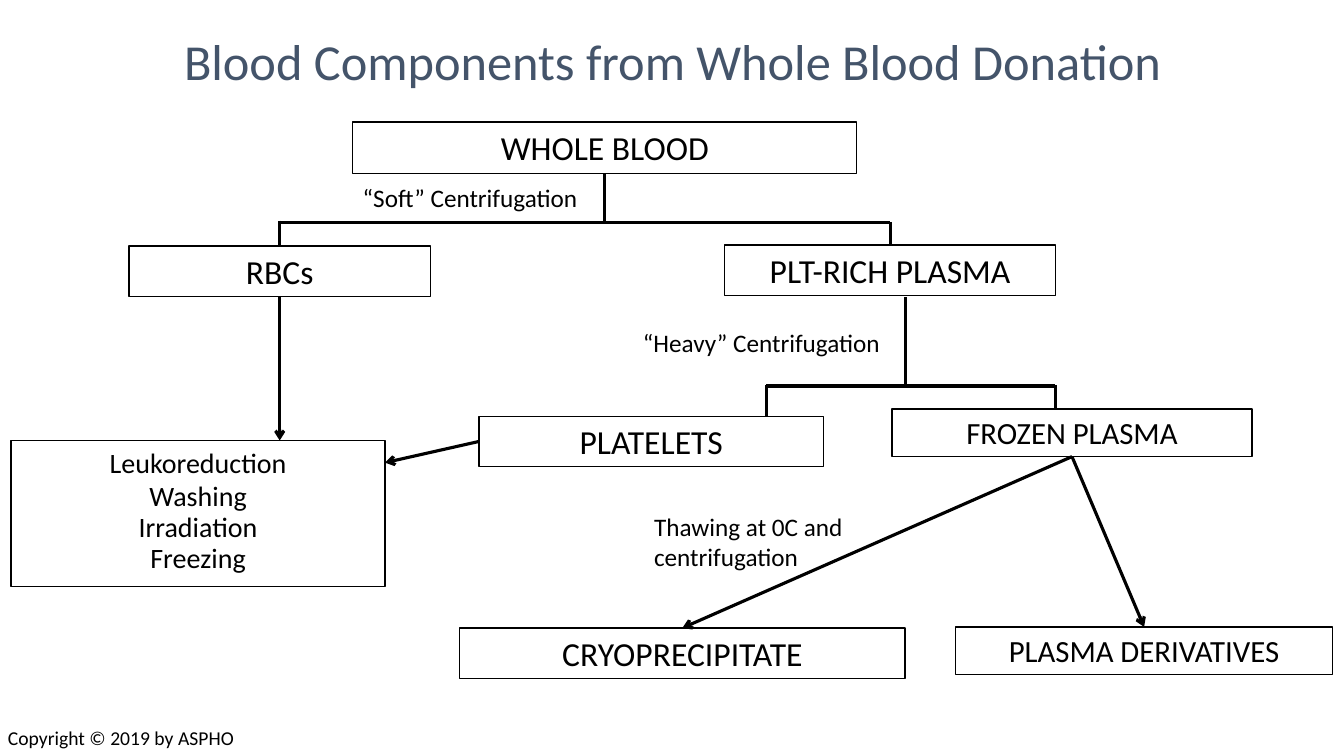
"""Build a flow chart of the blood components made from a whole blood donation."""
from dataclasses import dataclass
from typing import NamedTuple, Union

import pptx
import pptx.dml.color
import pptx.enum.shapes
import pptx.enum.text
import pptx.oxml
import pptx.oxml.ns
import pptx.util

COLORS = {"ink": "000000", "title": "44546A", "paper": "FFFFFF"}
FONT = "Calibri"
SLIDE_COLUMNS, SLIDE_ROWS = 133.33, 75
GRID_STEP = 0.1
TOP, LEFT, BOTTOM = 0, 1, 2
CENTER = pptx.enum.text.PP_ALIGN.CENTER
STRAIGHT = pptx.enum.shapes.MSO_CONNECTOR.STRAIGHT


class Point(NamedTuple):
    column: float
    row: float


class Side(NamedTuple):
    box: str
    site: int


class Area(NamedTuple):
    column: float
    row: float
    columns: float
    rows: float


@dataclass(frozen=True)
class Box:
    lines: tuple[str, ...]
    area: Area
    size: int = 24


@dataclass(frozen=True)
class Label:
    text: str
    area: Area
    size: int = 18
    color: str = "ink"
    centered: bool = False


@dataclass(frozen=True)
class Link:
    start: Union[Point, Side]
    end: Union[Point, Side]
    arrow: bool = False


BOXES = {
    "whole": Box(("WHOLE BLOOD",), Area(35, 12.1, 50, 5.1)),
    "red cells": Box(("RBCs",), Area(12.8, 24.4, 29.9, 5)),
    "rich plasma": Box(("PLT-RICH PLASMA",), Area(71.9, 24.3, 32.8, 5)),
    "platelets": Box(("PLATELETS",), Area(47.5, 41.3, 34.2, 5)),
    "frozen": Box(("FROZEN PLASMA",), Area(88.5, 40.6, 35.7, 4.7), 22),
    "cryo": Box(("CRYOPRECIPITATE",), Area(45.6, 62.3, 44.2, 5)),
    "derivatives": Box(("PLASMA DERIVATIVES",), Area(94.8, 62.2, 37.4, 4.7), 22),
    "processing": Box(("Leukoreduction", "Washing", "Irradiation", "Freezing"),
                      Area(1.1, 43.7, 37.1, 14.5), 20),
}
LABELS = (
    Label("Blood Components from Whole Blood Donation",
          Area(10.6, 2.5, 112.3, 7.1), 36, "title", True),
    Label("“Soft” Centrifugation", Area(35, 17.6, 25, 4)),
    Label("“Heavy” Centrifugation", Area(62.8, 32, 26.3, 4)),
    Label("Thawing at 0C and centrifugation", Area(63.9, 50.2, 23.1, 7.1)),
    Label("Copyright © 2019 by ASPHO", Area(-0.2, 71.5, 34, 3.4), 14),
)
LINKS = (
    Link(Side("whole", BOTTOM), Point(60, 22.1)),
    Link(Point(27.8, 22.1), Point(88.3, 22.1)),
    Link(Point(27.75, 21.9), Side("red cells", TOP)),
    Link(Point(88.3, 22), Side("rich plasma", TOP)),
    Link(Point(89.8, 29.5), Point(89.8, 38.3)),
    Link(Point(76, 38.3), Point(104.7, 38.3)),
    Link(Point(76, 38.2), Point(76, 41.3)),
    Link(Point(104.7, 38.2), Point(104.7, 40.6)),
    Link(Side("platelets", LEFT), Point(38.2, 45.9), True),
    Link(Side("red cells", BOTTOM), Point(27.75, 43.7), True),
    Link(Side("frozen", BOTTOM), Side("cryo", TOP), True),
    Link(Side("frozen", BOTTOM), Side("derivatives", TOP), True),
)


def grid(steps: float) -> int:
    return pptx.util.Inches(steps * GRID_STEP)


def color(name: str) -> pptx.dml.color.RGBColor:
    return pptx.dml.color.RGBColor.from_string(COLORS[name])


def add_run(paragraph, text: str, size: int, color_name: str) -> None:
    run = paragraph.add_run()
    run.text = text
    run.font.name = FONT
    run.font.size = pptx.util.Pt(size)
    run.font.color.rgb = color(color_name)


def add_box(slide, box: Box):
    shape = slide.shapes.add_shape(
        pptx.enum.shapes.MSO_SHAPE.RECTANGLE, *map(grid, box.area))
    shape.shadow.inherit = False
    shape.fill.background()
    shape.line.color.rgb = color("ink")
    shape.line.width = pptx.util.Pt(1)
    frame = shape.text_frame
    frame.word_wrap = True
    frame.vertical_anchor = pptx.enum.text.MSO_ANCHOR.TOP
    for index, line in enumerate(box.lines):
        paragraph = frame.add_paragraph() if index else frame.paragraphs[0]
        paragraph.alignment = CENTER
        if index:
            paragraph.line_spacing = 0.5
            paragraph.space_before = pptx.util.Pt(box.size / 2)
        add_run(paragraph, line, box.size, "ink")
    return shape


def add_label(slide, label: Label) -> None:
    frame = slide.shapes.add_textbox(*map(grid, label.area)).text_frame
    frame.word_wrap = True
    paragraph = frame.paragraphs[0]
    if label.centered:
        paragraph.alignment = CENTER
    add_run(paragraph, label.text, label.size, label.color)


def locate(end: Union[Point, Side]) -> Point:
    if isinstance(end, Point):
        return end
    area = BOXES[end.box].area
    across, down = {TOP: (0.5, 0), LEFT: (0, 0.5), BOTTOM: (0.5, 1)}[end.site]
    return Point(area.column + across * area.columns, area.row + down * area.rows)


def add_link(slide, link: Link, shapes: dict) -> None:
    start, end = locate(link.start), locate(link.end)
    connector = slide.shapes.add_connector(STRAIGHT, *map(grid, start + end))
    if isinstance(link.start, Side):
        connector.begin_connect(shapes[link.start.box], link.start.site)
    if isinstance(link.end, Side):
        connector.end_connect(shapes[link.end.box], link.end.site)
    connector.line.color.rgb = color("ink")
    connector.line.width = pptx.util.Pt(2.25)
    properties = connector.line._get_or_add_ln().getparent()
    if link.arrow:
        tail = pptx.oxml.parse_xml(
            f'<a:tailEnd {pptx.oxml.ns.nsdecls("a")} type="arrow"/>')
        connector.line._get_or_add_ln().append(tail)
    properties.append(pptx.oxml.parse_xml(
        f'<a:effectLst {pptx.oxml.ns.nsdecls("a")}/>'))


def main() -> None:
    presentation = pptx.Presentation()
    presentation.slide_width = grid(SLIDE_COLUMNS)
    presentation.slide_height = grid(SLIDE_ROWS)
    slide = presentation.slides.add_slide(presentation.slide_layouts[6])
    slide.background.fill.solid()
    slide.background.fill.fore_color.rgb = color("paper")
    shapes = {name: add_box(slide, box) for name, box in BOXES.items()}
    for link in LINKS:
        add_link(slide, link, shapes)
    for label in LABELS:
        add_label(slide, label)
    presentation.save("out.pptx")


if __name__ == "__main__":
    main()
